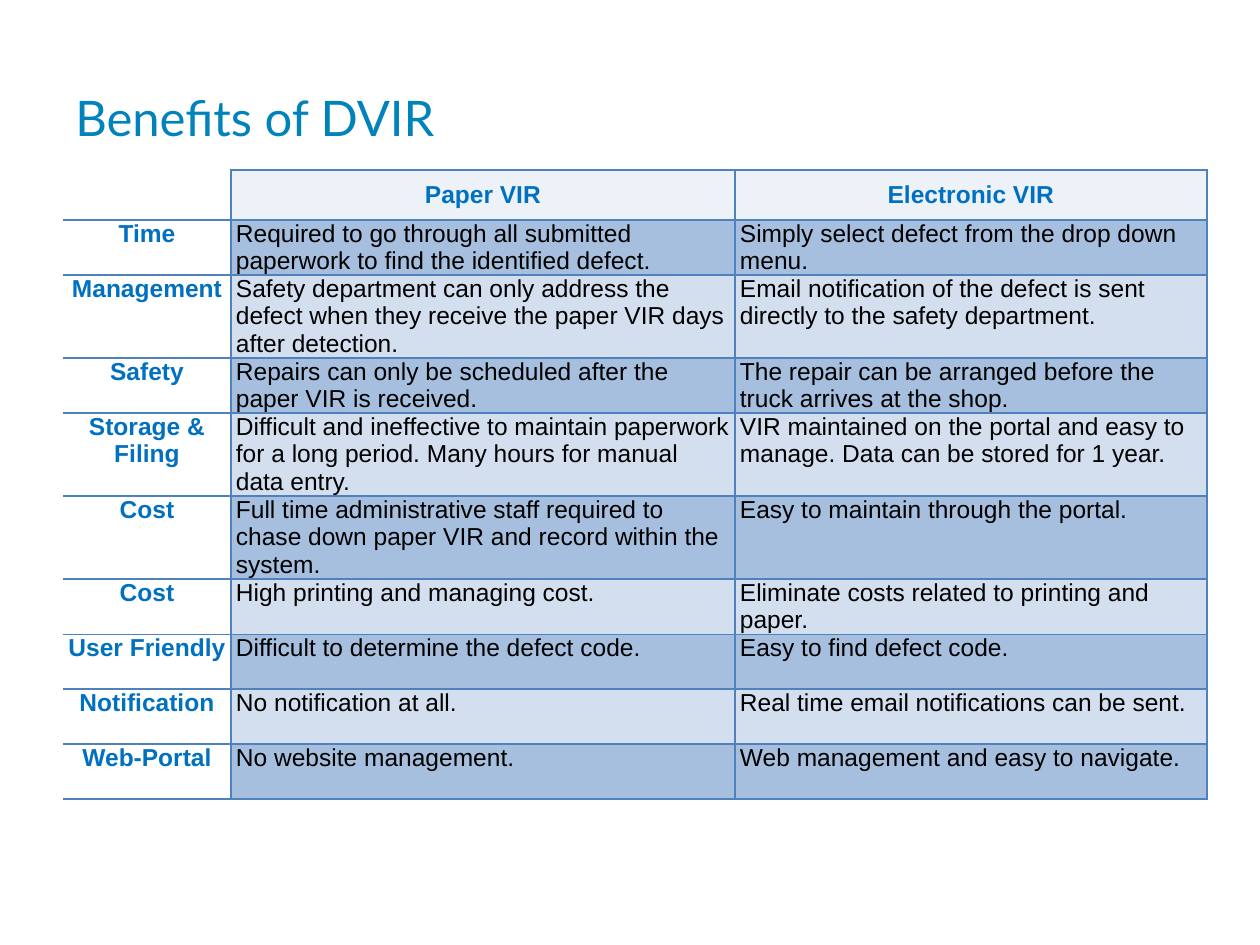
from lxml.etree import SubElement
from pptx import Presentation
from pptx.dml.color import RGBColor as Rgb
from pptx.enum.text import MSO_ANCHOR as Anchor, PP_ALIGN as Align
from pptx.oxml.ns import qn
from pptx.util import Pt

SCALE = 914400 / 126
COLORS = {
    "title": "0082BB", "label": "0070C0", "body": "000000", "border": "4F81BD",
    "blank": "FFFFFF", "header": "EDF2F8", "dark": "A7BFDE", "light": "D3DFEE",
}
COLUMN_WIDTHS = [168, 504, 472]
ROWS = [
    (50, "", "Paper VIR", "Electronic VIR"),
    (55, "Time", "Required to go through all submitted paperwork to find the identified defect.",
     "Simply select defect from the drop down menu."),
    (83, "Management", "Safety department can only address the defect when they receive "
     "the paper VIR days after detection.",
     "Email notification of the defect is sent directly to the safety department."),
    (55, "Safety", "Repairs can only be scheduled after the paper VIR is received.",
     "The repair can be arranged before the truck arrives at the shop."),
    (83, "Storage & Filing", "Difficult and ineffective to maintain paperwork for a long period. "
     "Many hours for manual data entry.",
     "VIR maintained on the portal and easy to manage. Data can be stored for 1 year."),
    (83, "Cost", "Full time administrative staff required to chase down paper VIR "
     "and record within the system.", "Easy to maintain through the portal."),
    (55, "Cost", "High printing and managing cost.",
     "Eliminate costs related to printing and paper."),
    (55, "User Friendly", "Difficult to determine the defect code.", "Easy to find defect code."),
    (55, "Notification", "No notification at all.", "Real time email notifications can be sent."),
    (55, "Web-Portal", "No website management.", "Web management and easy to navigate."),
]


def px(length):
    """Turn pixels into EMU."""
    return round(length * SCALE)


def color(name):
    """Look up a named colour."""
    return Rgb.from_string(COLORS[name])


def style_font(para, face, size, color_name, bold=False):
    """Set the font of a whole paragraph."""
    font = para.font
    font.name, font.size, font.bold = face, Pt(size), bold
    font.color.rgb = color(color_name)


def add_borders(cell, sides):
    """Draw the given sides of a cell and clear the others."""
    properties = cell._tc.get_or_add_tcPr()
    for side in "LRTB":
        line = SubElement(properties, qn(f"a:ln{side}"), w=str(Pt(1)))
        if side in sides:
            fill = SubElement(line, qn("a:solidFill"))
            SubElement(fill, qn("a:srgbClr"), val=COLORS["border"])
        else:
            SubElement(line, qn("a:noFill"))


def fill_cell(cell, text, row, column):
    """Write and style one table cell according to its place."""
    is_header, is_label = row == 0, column == 0
    sides = "LRTB" if not is_label else "RB" if is_header else "RTB"
    add_borders(cell, sides)
    band = "header" if is_header else "dark" if row % 2 else "light"
    cell.fill.solid()
    cell.fill.fore_color.rgb = color("blank" if is_label else band)
    cell.margin_left = cell.margin_right = px(5)
    cell.margin_top = cell.margin_bottom = 0
    cell.vertical_anchor = Anchor.MIDDLE if is_header else Anchor.TOP
    cell.text = text
    para = cell.text_frame.paragraphs[0]
    strong = is_header or is_label
    para.alignment = Align.CENTER if strong else Align.LEFT
    style_font(para, "Arial", 14, "label" if strong else "body", strong)


def add_comparison(slide):
    """Add the table comparing paper and electronic reports."""
    frame = slide.shapes.add_table(
        len(ROWS), len(COLUMN_WIDTHS), px(63), px(170),
        px(sum(COLUMN_WIDTHS)), px(sum(row[0] for row in ROWS)))
    table = frame.table
    table.first_row = table.horz_banding = False
    for column, width in zip(table.columns, COLUMN_WIDTHS):
        column.width = px(width)
    for row, (height, *texts) in enumerate(ROWS):
        table.rows[row].height = px(height)
        for column, text in enumerate(texts):
            fill_cell(table.cell(row, column), text, row, column)


def add_title(slide, text):
    """Add the slide title."""
    box = slide.shapes.add_textbox(px(63), px(38), px(1134), px(157))
    frame = box.text_frame
    frame.word_wrap = True
    frame.vertical_anchor = Anchor.MIDDLE
    frame.text = text
    style_font(frame.paragraphs[0], "Lato", 28, "title")


def main():
    """Build the deck and save it."""
    deck = Presentation()
    deck.slide_width, deck.slide_height = px(1260), px(945)
    slide = deck.slides.add_slide(deck.slide_layouts[6])
    add_comparison(slide)
    add_title(slide, "Benefits of DVIR")
    deck.save("out.pptx")


if __name__ == "__main__":
    main()
